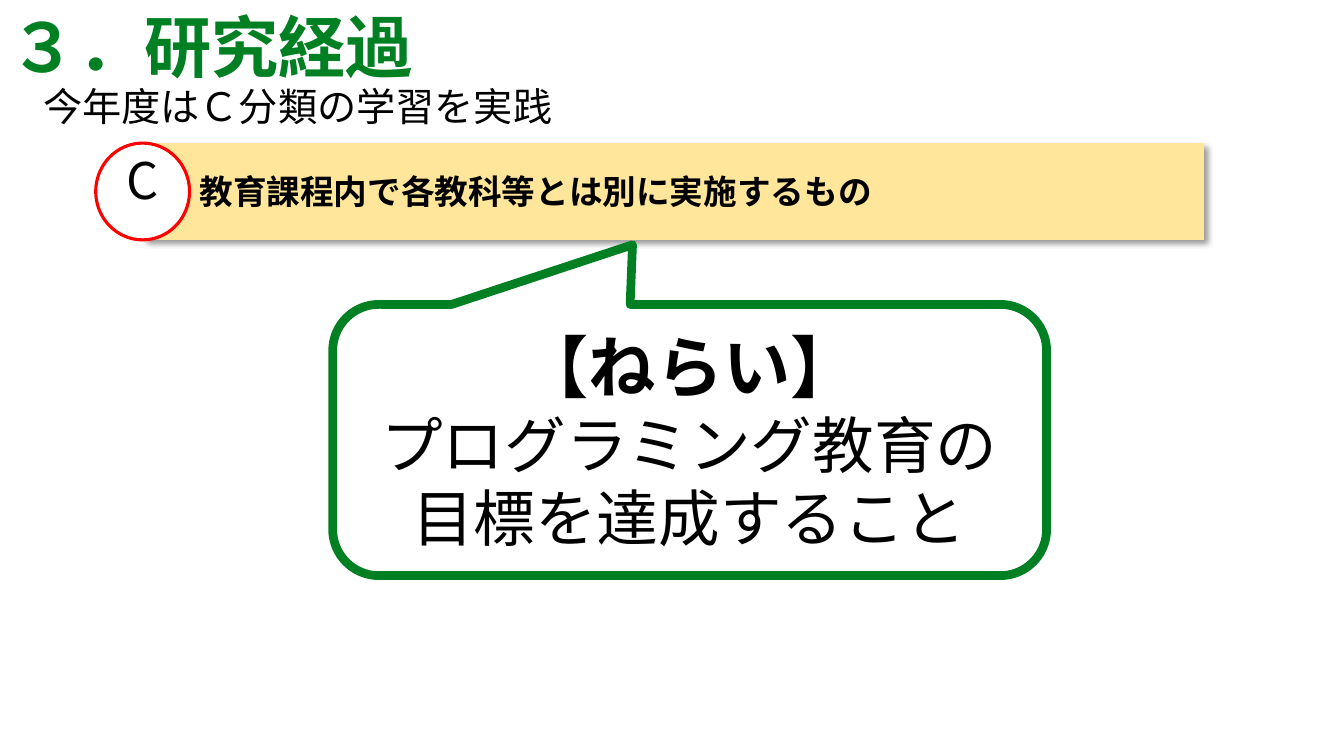
from dataclasses import dataclass

from lxml import etree
from pptx import Presentation
from pptx.dml.color import RGBColor
from pptx.enum import shapes, text
from pptx.oxml import ns
from pptx.util import Inches, Pt


@dataclass(frozen=True)
class Theme:
    font: str = "Noto Sans CJK JP"
    green: str = "008023"
    red: str = "FF0000"
    sand: str = "FFE69A"
    white: str = "FFFFFF"
    black: str = "000000"
    title: int = 48
    body: int = 44
    letter: int = 36
    lead: int = 28
    label: int = 24


THEME = Theme()


@dataclass(frozen=True)
class Line:
    words: str
    size: int
    bold: bool = False
    color: str = THEME.black


@dataclass(frozen=True)
class Box:
    """One text-bearing element; without a kind it is a plain text box."""
    place: tuple[float, float, float, float]
    lines: tuple[Line, ...]
    kind: shapes.MSO_SHAPE | None = None
    fill: str = THEME.white
    outline: str | None = None
    outline_width: float = 0
    adjustments: tuple[float, ...] = ()
    centred: bool = False
    inset: float | None = None
    indent: float = 0
    spacing: float | None = None
    shadow: bool = False


BOXES = (
    # Heading and lead sentence
    Box((0, 0, 12.18, 0.91),
        (Line("３．研究経過", THEME.title, True, THEME.green),)),
    Box((0.33, 0.77, 9.02, 0.57),
        (Line("今年度はＣ分類の学習を実践", THEME.lead),)),
    # Category bar with its letter badge
    Box((1.42, 1.42, 10.52, 0.96),
        (Line("教育課程内で各教科等とは別に実施するもの", THEME.label, True),),
        shapes.MSO_SHAPE.RECTANGLE, THEME.sand, indent=0.46, shadow=True),
    Box((0.95, 1.42, 0.93, 0.96), (Line("C", THEME.letter),),
        shapes.MSO_SHAPE.OVAL, outline=THEME.red, outline_width=2.25,
        centred=True, inset=0, spacing=26),
    # Callout with the aim
    Box((3.3, 3.02, 7.08, 2.69),
        (Line("【ねらい】", THEME.title, True),
         Line("プログラミング教育の目標を達成すること", THEME.body)),
        shapes.MSO_SHAPE.ROUNDED_RECTANGULAR_CALLOUT,
        outline=THEME.green, outline_width=6.25,
        adjustments=(-0.08, -0.72, 0.17), centred=True),
)


def add_shadow(shape) -> None:
    """Soft shadow falling to the lower right."""
    effects = shape._element.spPr.find(ns.qn("a:effectLst"))
    outer = etree.SubElement(effects, ns.qn("a:outerShdw"), {
        "blurRad": str(Pt(4)), "dist": str(Pt(3)), "dir": str(45 * 60000),
        "algn": "tl", "rotWithShape": "0"})
    color = etree.SubElement(outer, ns.qn("a:srgbClr"), val=THEME.black)
    etree.SubElement(color, ns.qn("a:alpha"), val="40000")


def write_line(para, line: Line, box: Box) -> None:
    para.text = line.words
    para.alignment = text.PP_ALIGN.CENTER if box.centred else text.PP_ALIGN.LEFT
    if box.spacing is not None:
        para.line_spacing = Pt(box.spacing)
    if box.indent:
        para._p.get_or_add_pPr().set("marL", str(Inches(box.indent)))
    for span in para.runs:
        span.font.name = THEME.font
        span.font.size = Pt(line.size)
        span.font.bold = line.bold
        span.font.color.rgb = RGBColor.from_string(line.color)
        # East Asian typeface
        etree.SubElement(span._r.get_or_add_rPr(), ns.qn("a:ea"),
                         typeface=THEME.font)


def style_shape(shape, box: Box) -> None:
    shape.shadow.inherit = False
    shape.fill.solid()
    shape.fill.fore_color.rgb = RGBColor.from_string(box.fill)
    if box.outline:
        shape.line.color.rgb = RGBColor.from_string(box.outline)
        shape.line.width = Pt(box.outline_width)
    else:
        shape.line.fill.background()
    for index, value in enumerate(box.adjustments):
        shape.adjustments[index] = value
    if box.shadow:
        add_shadow(shape)


def draw_box(page, box: Box) -> None:
    place = [Inches(length) for length in box.place]
    if box.kind is None:
        shape = page.shapes.add_textbox(*place)
    else:
        shape = page.shapes.add_shape(box.kind, *place)
        style_shape(shape, box)
    frame = shape.text_frame
    frame.word_wrap = True
    if box.kind is None:
        frame.auto_size = text.MSO_AUTO_SIZE.SHAPE_TO_FIT_TEXT
    else:
        frame.vertical_anchor = text.MSO_ANCHOR.MIDDLE
    if box.inset is not None:
        frame.margin_left = frame.margin_right = Inches(box.inset)
        frame.margin_top = frame.margin_bottom = Inches(box.inset)
    for index, line in enumerate(box.lines):
        para = frame.add_paragraph() if index else frame.paragraphs[0]
        write_line(para, line, box)


def main() -> None:
    deck = Presentation()
    deck.slide_width, deck.slide_height = Inches(13.33), Inches(7.5)
    page = deck.slides.add_slide(deck.slide_layouts[6])
    for box in BOXES:
        draw_box(page, box)
    deck.save("out.pptx")


if __name__ == "__main__":
    main()
